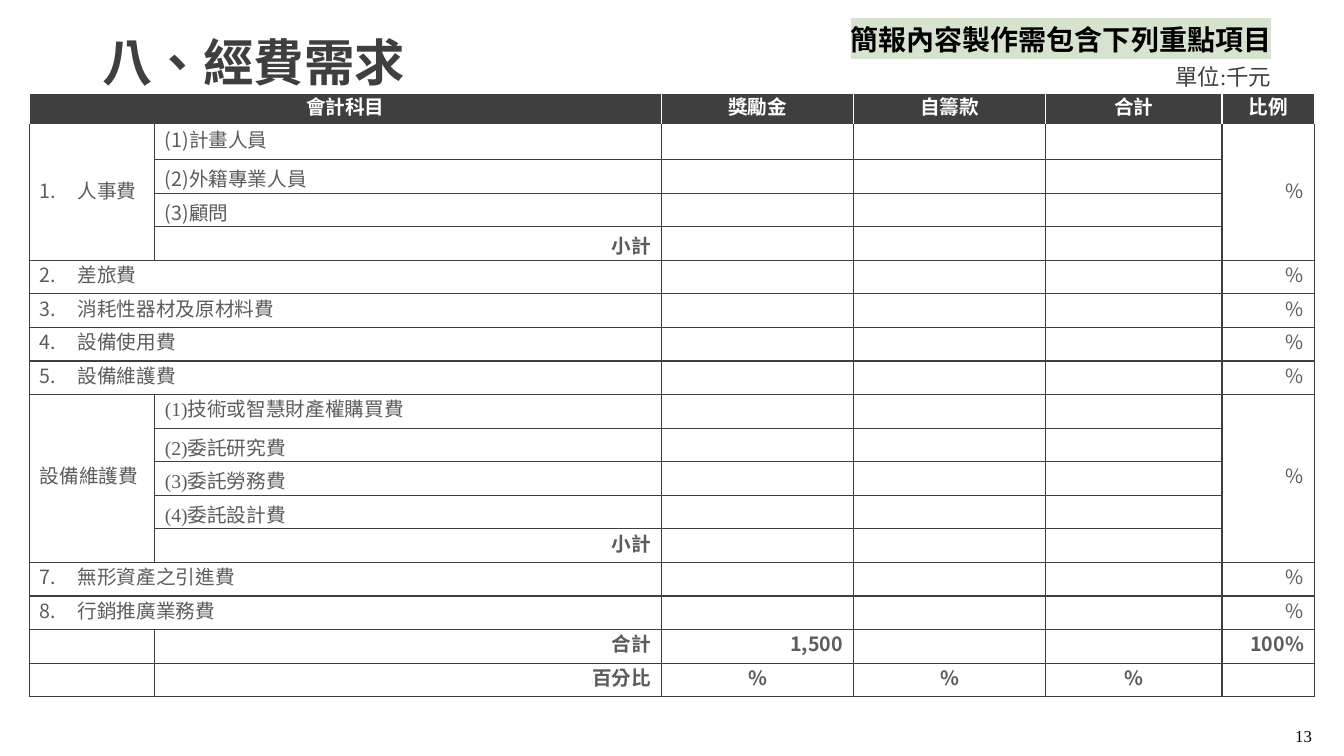
"""Build the budget requirements slide with its expense table."""
from dataclasses import dataclass

from lxml import etree
from pptx import Presentation
from pptx import util as u
from pptx.dml.color import RGBColor
from pptx.enum.text import MSO_ANCHOR, PP_ALIGN
from pptx.oxml.ns import qn

EMU_PER_PX = 9525
SERIF, SANS = "Times New Roman", "Noto Sans CJK SC"
DARK, GREY, WHITE, BLACK, MINT = "3F3F3F", "5C5C5C", "FFFFFF", "000000", "D5E3CF"
LEFT, CENTER, RIGHT = PP_ALIGN.JUSTIFY, PP_ALIGN.CENTER, PP_ALIGN.RIGHT
COLUMN_WIDTHS = [119, 483, 183, 183, 168, 88]
ROW_HEIGHTS = [30, 33] + [32] * 16
RATIO_COLUMN = 5


@dataclass(frozen=True)
class Style:
    size: int = 14
    face: str = SERIF
    color: str = GREY
    bold: bool = False
    align: PP_ALIGN = LEFT


@dataclass(frozen=True)
class Entry:
    row: int
    col: int
    text: str
    style: Style = Style()
    rows: int = 1
    cols: int = 1
    number: int = 0
    lowered: bool = False


@dataclass(frozen=True)
class Label:
    text: str
    box: tuple[int, int, int, int]
    style: Style
    anchor: MSO_ANCHOR = MSO_ANCHOR.TOP
    highlight: str = ""


HEADING = Style(color=WHITE, bold=True, align=CENTER)
SANS_ITEM = Style(face=SANS)
SUBTOTAL = Style(face=SANS, bold=True, align=RIGHT)
TOTAL = Style(bold=True, align=RIGHT)
PERCENT = Style(face=SANS, align=RIGHT)
SHARE = Style(face=SANS, bold=True, align=CENTER)

ENTRIES = [
    Entry(0, 0, "會計科目", HEADING, cols=2),
    *(Entry(0, col, name, HEADING) for col, name in enumerate(["獎勵金", "自籌款", "合計"], 2)),
    Entry(0, RATIO_COLUMN, "比例", Style(face=SANS, color=WHITE, bold=True, align=CENTER)),
    Entry(1, 0, "人事費", rows=4, number=1),
    *(Entry(row, 1, name, SANS_ITEM, lowered=row > 1)
      for row, name in enumerate(["(1)計畫人員", "(2)外籍專業人員", "(3)顧問"], 1)),
    Entry(4, 1, "小計", SUBTOTAL, lowered=True),
    *(Entry(row, 0, name, cols=2, number=row - 3)
      for row, name in enumerate(["差旅費", "消耗性器材及原材料費", "設備使用費", "設備維護費"], 5)),
    Entry(9, 0, "設備維護費", rows=5),
    *(Entry(row, 1, name, lowered=row > 9)
      for row, name in enumerate(["(1)技術或智慧財產權購買費", "(2)委託研究費",
                                  "(3)委託勞務費", "(4)委託設計費"], 9)),
    Entry(13, 1, "小計", SUBTOTAL),
    *(Entry(row, 0, name, cols=2, number=row - 7)
      for row, name in enumerate(["無形資產之引進費", "行銷推廣業務費"], 14)),
    *(Entry(row, RATIO_COLUMN, "%", PERCENT, rows=rows)
      for row, rows in {1: 4, 5: 1, 6: 1, 7: 1, 8: 1, 9: 5, 14: 1, 15: 1}.items()),
    Entry(16, 1, "合計", TOTAL),
    Entry(16, 2, "1,500", SUBTOTAL),
    Entry(16, RATIO_COLUMN, "100%", SUBTOTAL),
    Entry(17, 1, "百分比", TOTAL),
    *(Entry(17, col, "%", SHARE) for col in (2, 3, 4)),
]

TITLE = Label("八、經費需求", (88, 31, 1104, 66), Style(36, color=DARK, bold=True))
LABELS = [
    Label("簡報內容製作需包含下列重點項目", (752, 17, 517, 42),
          Style(20, color=BLACK, bold=True, align=CENTER), highlight=MINT),
    Label("單位:千元", (1049, 55, 171, 36), Style(16, color=DARK, align=RIGHT)),
    Label("13", (1214, 685, 55, 32), Style(12, color=BLACK, align=CENTER), MSO_ANCHOR.MIDDLE),
]


def px(length: int) -> int:
    return u.Emu(length * EMU_PER_PX)


def rgb(color: str) -> RGBColor:
    return RGBColor.from_string(color)


def add_xml(parent, tag: str, **attributes: str):
    return etree.SubElement(parent, qn(tag), attributes)


def add_text(paragraph, words: str):
    run = paragraph.add_run()
    run.text = words
    properties = run._r.get_or_add_rPr()
    properties.set("lang", "zh-TW")
    return properties


def format_paragraph(paragraph, style: Style) -> None:
    paragraph.alignment = style.align
    font = paragraph.font
    font.size, font.bold, font.name = u.Pt(style.size), style.bold, style.face
    font.color.rgb = rgb(style.color)
    add_xml(paragraph._p.pPr.find(qn("a:defRPr")), "a:ea", typeface=SANS)


def number_paragraph(paragraph, start: int) -> None:
    properties = paragraph._p.get_or_add_pPr()
    properties.set("marL", str(px(36)))
    properties.set("indent", str(px(-36)))
    add_xml(properties, "a:buFont", typeface=SANS)
    add_xml(properties, "a:buAutoNum", type="arabicPeriod", startAt=str(start))


def fill_label(shape, label: Label) -> None:
    shape.left, shape.top, shape.width, shape.height = map(px, label.box)
    frame = shape.text_frame
    frame.word_wrap, frame.vertical_anchor = True, label.anchor
    paragraph = frame.paragraphs[0]
    properties = add_text(paragraph, label.text)
    format_paragraph(paragraph, label.style)
    if label.highlight:
        marker = add_xml(properties, "a:highlight")
        add_xml(marker, "a:srgbClr", val=label.highlight)


def format_cell(cell, row: int) -> None:
    properties = cell._tc.get_or_add_tcPr()
    for side in "LRTB":
        white = row == 0 or (row == 1 and side == "T")
        line = add_xml(properties, f"a:ln{side}", w=str(u.Pt(1)))
        add_xml(add_xml(line, "a:solidFill"), "a:srgbClr", val=WHITE if white else DARK)
    cell.fill.solid()
    cell.fill.fore_color.rgb = rgb(WHITE if row else DARK)
    cell.vertical_anchor = MSO_ANCHOR.MIDDLE
    cell.margin_left = cell.margin_right = px(10)
    cell.margin_top = cell.margin_bottom = px(4)
    paragraph = cell.text_frame.paragraphs[0]
    paragraph.line_spacing = u.Pt(16)
    add_xml(paragraph._p, "a:endParaRPr", lang="zh-TW", sz="1200")


def write_entry(table, entry: Entry) -> None:
    cell = table.cell(entry.row, entry.col)
    if entry.rows > 1 or entry.cols > 1:
        cell.merge(table.cell(entry.row + entry.rows - 1, entry.col + entry.cols - 1))
    if entry.lowered:
        cell.margin_top, cell.margin_bottom = px(9), px(0)
    paragraph = cell.text_frame.paragraphs[0]
    add_text(paragraph, entry.text)
    if entry.number:
        number_paragraph(paragraph, entry.number)
    format_paragraph(paragraph, entry.style)


def add_budget(slide) -> None:
    budget = slide.shapes.add_table(
        len(ROW_HEIGHTS), len(COLUMN_WIDTHS), px(28), px(89),
        px(sum(COLUMN_WIDTHS)), px(sum(ROW_HEIGHTS))).table
    budget.first_row = budget.horz_banding = False
    for column, width in zip(budget.columns, COLUMN_WIDTHS):
        column.width = px(width)
    for index, (row, height) in enumerate(zip(budget.rows, ROW_HEIGHTS)):
        row.height = px(height)
        for cell in row.cells:
            format_cell(cell, index)
    for entry in ENTRIES:
        write_entry(budget, entry)


def main() -> None:
    deck = Presentation()
    deck.slide_width, deck.slide_height = px(1280), px(720)
    slide = deck.slides.add_slide(deck.slide_layouts[5])
    add_budget(slide)
    fill_label(slide.shapes.title, TITLE)
    slide.shapes.title.text_frame.paragraphs[0].line_spacing = 0.9
    for label in LABELS:
        fill_label(slide.shapes.add_textbox(0, 0, 0, 0), label)
    deck.save("out.pptx")


if __name__ == "__main__":
    main()
